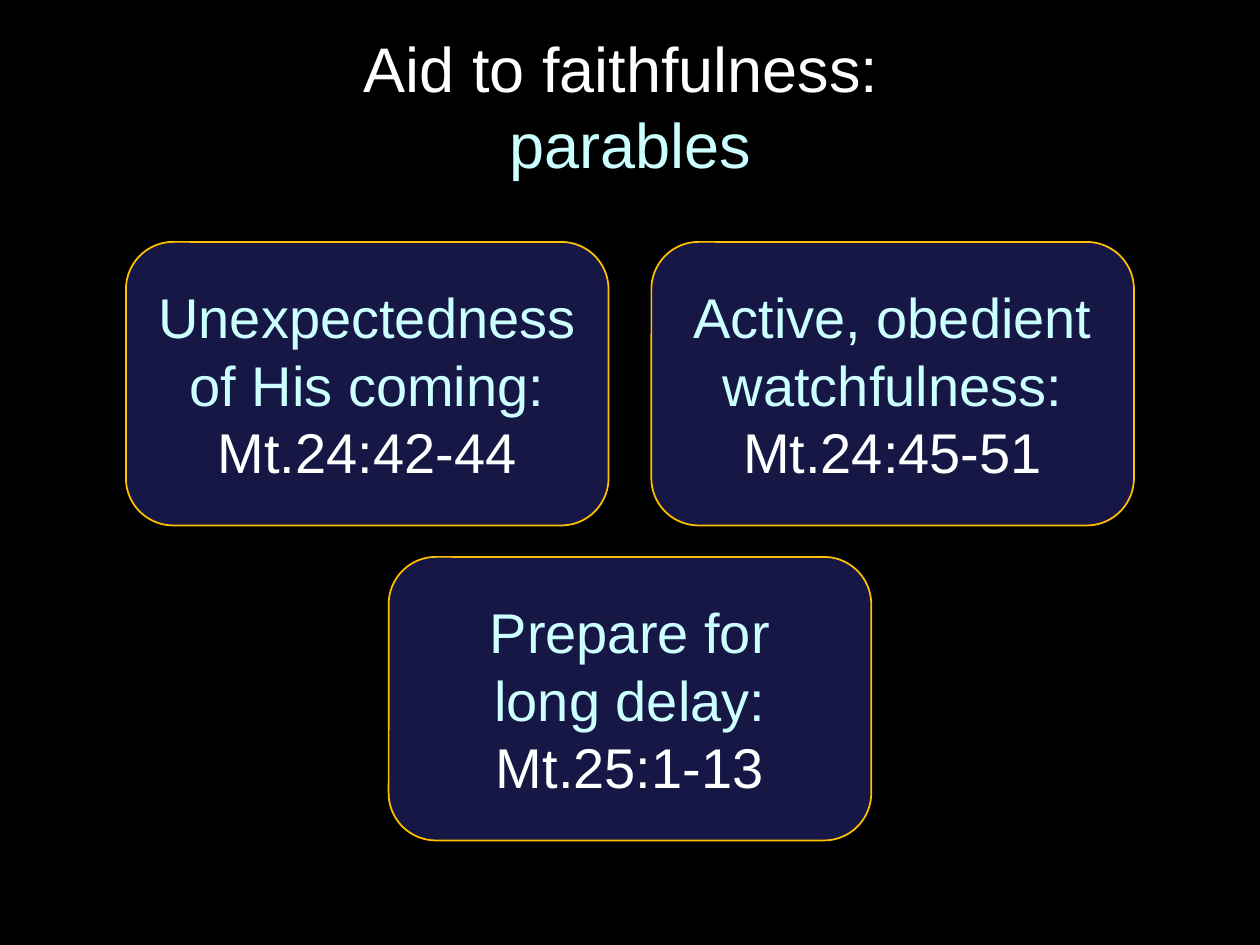
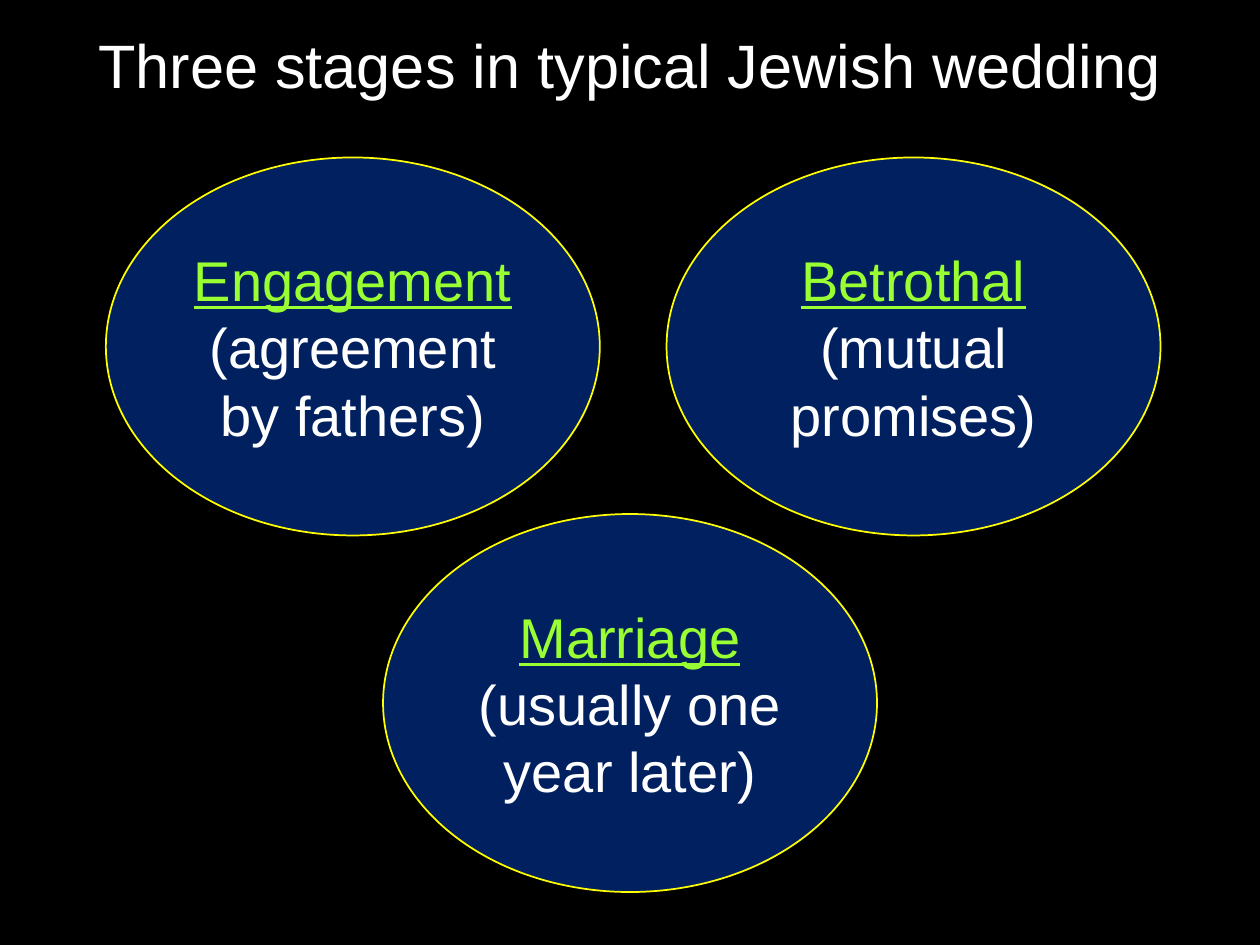
from dataclasses import dataclass

from pptx import Presentation
from pptx.dml.color import RGBColor
from pptx.enum import shapes, text
from pptx.util import Inches, Pt

SLIDE_WIDTH, SLIDE_HEIGHT = 10, 7.5


@dataclass(frozen=True)
class Theme:
    font: str = "Arial"
    background: str = "000000"
    white: str = "FFFFFF"
    ice: str = "CCFFFF"
    lime: str = "99FF33"
    indigo: str = "171745"
    navy: str = "002060"
    amber: str = "FFC000"
    yellow: str = "FFFF00"
    title_size: int = 36
    long_title_size: int = 35
    body_size: int = 32
    line_width: int = 1


THEME = Theme()


def color(code):
    return RGBColor.from_string(code)


def write(paragraph, words, size=THEME.body_size, ink=THEME.white, underline=False):
    """Append formatted words to a centred paragraph; a newline becomes a line break."""
    paragraph.alignment = text.PP_ALIGN.CENTER
    for index, line in enumerate(words.split("\n")):
        if index:
            paragraph.add_line_break()
        if not line:
            continue
        run = paragraph.add_run()
        run.text = line
        run.font.name = THEME.font
        run.font.size = Pt(size)
        run.font.color.rgb = color(ink)
        run.font.underline = underline


class Deck:
    def __init__(self, theme):
        self.theme = theme
        self.presentation = Presentation()
        self.presentation.slide_width = Inches(SLIDE_WIDTH)
        self.presentation.slide_height = Inches(SLIDE_HEIGHT)
        self.slide = None

    def new_slide(self):
        self.slide = self.presentation.slides.add_slide(self.presentation.slide_layouts[6])
        fill = self.slide.background.fill
        fill.solid()
        fill.fore_color.rgb = color(self.theme.background)

    def title(self, height, *parts):
        """Add the heading; each part is (words, format)."""
        box = self.slide.shapes.add_textbox(
            Inches(0.5), Inches(0.17), Inches(SLIDE_WIDTH - 1), Inches(height))
        frame = box.text_frame
        frame.word_wrap = True
        frame.vertical_anchor = text.MSO_ANCHOR.MIDDLE
        for words, style in parts:
            write(frame.paragraphs[0], words, **style)

    def panel(self, kind, left, top, width, height, fill, line, paragraphs):
        """Add an outlined shape with one (words, format) pair per paragraph."""
        shape = self.slide.shapes.add_shape(
            kind, Inches(left), Inches(top), Inches(width), Inches(height))
        shape.shadow.inherit = False
        shape.fill.solid()
        shape.fill.fore_color.rgb = color(fill)
        shape.line.color.rgb = color(line)
        shape.line.width = Pt(self.theme.line_width)
        frame = shape.text_frame
        frame.word_wrap = True
        frame.vertical_anchor = text.MSO_ANCHOR.MIDDLE
        for index, (words, style) in enumerate(paragraphs):
            paragraph = frame.add_paragraph() if index else frame.paragraphs[0]
            write(paragraph, words, **style)

    def triangle(self, kind, entries, lefts, tops, size, fill, line, heading):
        """Place two panels above a third that is centred on the slide."""
        width, height = size
        upper, lower = tops
        places = [(left, upper) for left in lefts]
        places.append(((SLIDE_WIDTH - width) / 2, lower))
        for (left, top), (head, detail) in zip(places, entries):
            self.panel(kind, left, top, width, height, fill, line,
                       [(head, heading), (detail, {})])


def add_parables(deck):
    theme = deck.theme
    deck.new_slide()
    deck.title(1.33,
               ("Aid to faithfulness: \n", {"size": theme.title_size}),
               ("parables", {"size": theme.title_size, "ink": theme.ice}))
    parables = [
        ("Unexpectedness of His coming:", "Mt.24:42-44"),
        ("Active, obedient watchfulness:", "Mt.24:45-51"),
        ("Prepare for\nlong delay:", "Mt.25:1-13"),
    ]
    deck.triangle(shapes.MSO_SHAPE.ROUNDED_RECTANGLE, parables,
                  lefts=(1, 5.17), tops=(1.92, 4.42), size=(3.83, 2.25),
                  fill=theme.indigo, line=theme.amber, heading={"ink": theme.ice})


def add_wedding_stages(deck):
    theme = deck.theme
    deck.new_slide()
    deck.title(0.67, ("Three stages in typical Jewish wedding",
                      {"size": theme.long_title_size}))
    stages = [
        ("Engagement", "(agreement by fathers)"),
        ("Betrothal", "(mutual promises)"),
        ("Marriage", "(usually one year later)"),
    ]
    deck.triangle(shapes.MSO_SHAPE.OVAL, stages,
                  lefts=(0.84, 5.29), tops=(1.25, 4.08), size=(3.92, 3),
                  fill=theme.navy, line=theme.yellow,
                  heading={"ink": theme.lime, "underline": True})


def main():
    deck = Deck(THEME)
    add_parables(deck)
    add_wedding_stages(deck)
    deck.presentation.save("out.pptx")


if __name__ == "__main__":
    main()
